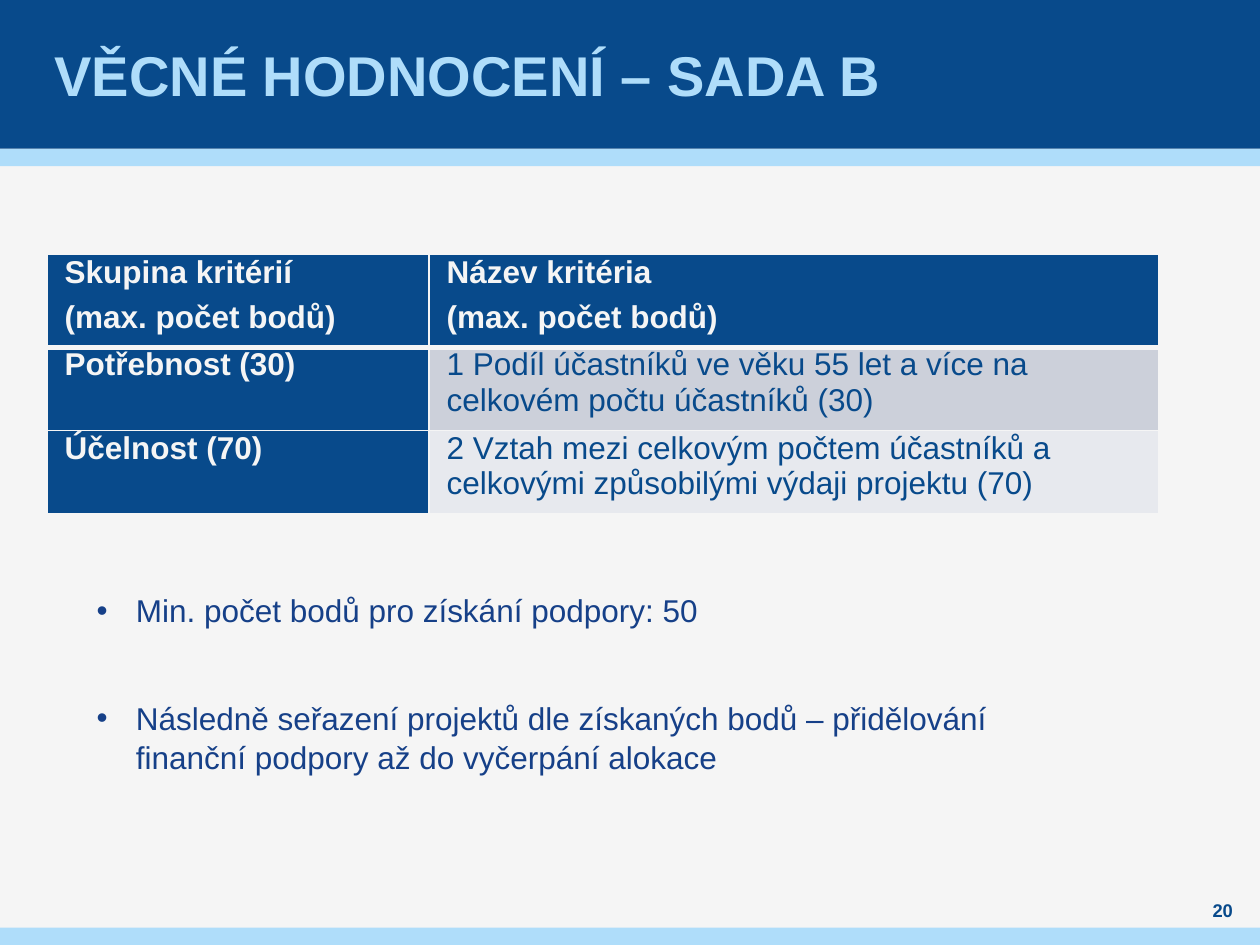
from dataclasses import dataclass

from lxml import etree
from pptx import Presentation
from pptx.dml.color import RGBColor
from pptx.enum.shapes import MSO_SHAPE
from pptx.enum.text import MSO_ANCHOR, PP_ALIGN
from pptx.oxml.ns import qn
from pptx.util import Cm, Pt

RECT = MSO_SHAPE.RECTANGLE
MIDDLE = MSO_ANCHOR.MIDDLE
LEFT, CENTER = PP_ALIGN.LEFT, PP_ALIGN.CENTER


@dataclass(frozen=True)
class Theme:
    font: str = "Arial"
    background: str = "F5F5F5"
    navy: str = "084A8B"
    sky: str = "AFDDFA"
    bullet: str = "164088"
    bands: tuple = ("CCD0DA", "E7E9EE")
    title_size: float = 32
    body_size: float = 18
    number_size: float = 10.5


THEME = Theme()
SLIDE_W, SLIDE_H = 25.4, 19.05
HEADER_H, STRIPE_H = 3, 0.35

CRITERIA = [
    ("Skupina kritérií\n(max. počet bodů)", "Název kritéria\n(max. počet bodů)"),
    ("Potřebnost (30)",
     "1 Podíl účastníků ve věku 55 let a více na celkovém počtu účastníků (30)"),
    ("Účelnost (70)",
     "2 Vztah mezi celkovým počtem účastníků a celkovými způsobilými výdaji projektu (70)"),
]


def rgb(value):
    return RGBColor.from_string(value)


def style_text(p, size, color, bold=False):
    for r in p.runs:
        r.font.name = THEME.font
        r.font.size = Pt(size)
        r.font.bold = bold
        r.font.color.rgb = rgb(color)


def add_bar(slide, top, height, color):
    s = slide.shapes.add_shape(RECT, 0, Cm(top), Cm(SLIDE_W), Cm(height))
    s.shadow.inherit = False
    s.fill.solid()
    s.fill.fore_color.rgb = rgb(color)
    s.line.fill.background()


def add_text(slide, box, text, size, color, bold=False, align=LEFT, side_inset=0):
    """Add a vertically centred line of text."""
    tf = slide.shapes.add_textbox(*map(Cm, box)).text_frame
    tf.word_wrap = True
    tf.vertical_anchor = MIDDLE
    tf.margin_top = tf.margin_bottom = 0
    tf.margin_left = tf.margin_right = Cm(side_inset)
    tf.text = text
    p = tf.paragraphs[0]
    p.alignment = align
    style_text(p, size, color, bold)


def add_frame(slide):
    add_bar(slide, HEADER_H, STRIPE_H, THEME.sky)
    add_bar(slide, 0, HEADER_H, THEME.navy)
    add_bar(slide, SLIDE_H - STRIPE_H, STRIPE_H, THEME.sky)


def add_cell_borders(cell, bottom):
    """Draw 1 pt borders, with the bottom one of the given width."""
    tc_pr = cell._tc.get_or_add_tcPr()
    widths = {"a:lnL": 1, "a:lnR": 1, "a:lnT": 1, "a:lnB": bottom}
    for i, (tag, width) in enumerate(widths.items()):
        ln = etree.Element(qn(tag), w=str(Pt(width)))
        fill = etree.SubElement(ln, qn("a:solidFill"))
        etree.SubElement(fill, qn("a:srgbClr"), val=THEME.background)
        tc_pr.insert(i, ln)


def fill_cell(cell, text, fill, color, bold, bottom):
    cell.fill.solid()
    cell.fill.fore_color.rgb = rgb(fill)
    cell.margin_top = cell.margin_bottom = 0
    cell.text = text
    for p in cell.text_frame.paragraphs:
        p.space_before = p.space_after = Pt(3)
        p._p.get_or_add_pPr().set("marL", str(Cm(0.1)))
        style_text(p, THEME.body_size, color, bold)
    add_cell_borders(cell, bottom)


def add_criteria_table(slide, box, col_widths, row_heights):
    table = slide.shapes.add_table(
        len(row_heights), len(col_widths), *map(Cm, box)).table
    for col, width in zip(table.columns, col_widths):
        col.width = Cm(width)
    for i, (row, height) in enumerate(zip(table.rows, row_heights)):
        row.height = Cm(height)
        for j, text in enumerate(CRITERIA[i]):
            heading = i == 0 or j == 0
            fill = THEME.navy if heading else THEME.bands[i - 1]
            color = THEME.background if heading else THEME.navy
            fill_cell(row.cells[j], text, fill, color, heading, 3 if i == 0 else 1)


def add_bullet(slide, box, text):
    tf = slide.shapes.add_textbox(*map(Cm, box)).text_frame
    tf.word_wrap = True
    tf.text = text
    p = tf.paragraphs[0]
    p.line_spacing = 1.05
    p_pr = p._p.get_or_add_pPr()
    p_pr.set("marL", str(Cm(0.79)))
    p_pr.set("indent", str(Cm(-0.79)))
    etree.SubElement(p_pr, qn("a:buFont"), typeface=THEME.font)
    etree.SubElement(p_pr, qn("a:buChar"), char="•")
    style_text(p, THEME.body_size, THEME.bullet)


def main():
    prs = Presentation()
    prs.slide_width, prs.slide_height = Cm(SLIDE_W), Cm(SLIDE_H)
    slide = prs.slides.add_slide(prs.slide_layouts[6])
    slide.background.fill.solid()
    slide.background.fill.fore_color.rgb = rgb(THEME.background)

    add_frame(slide)
    add_text(slide, (1, 0, 23.4, HEADER_H), "VĚCNÉ HODNOCENÍ – SADA B",
             THEME.title_size, THEME.sky, bold=True, side_inset=0.1)
    add_text(slide, (24, 18.1, 1.3, 0.5), "20",
             THEME.number_size, THEME.navy, bold=True, align=CENTER)
    add_criteria_table(slide, (0.95, 5.13, 22.4, 5.24), (7.7, 14.7), (1.87, 1.68, 1.68))
    add_bullet(slide, (1.7, 11.76, 12.7, 1.02), "Min. počet bodů pro získání podpory: 50")
    add_bullet(slide, (1.7, 13.92, 20.8, 1.8),
               "Následně seřazení projektů dle získaných bodů – přidělování "
               "finanční podpory až do vyčerpání alokace")
    prs.save("out.pptx")


if __name__ == "__main__":
    main()
